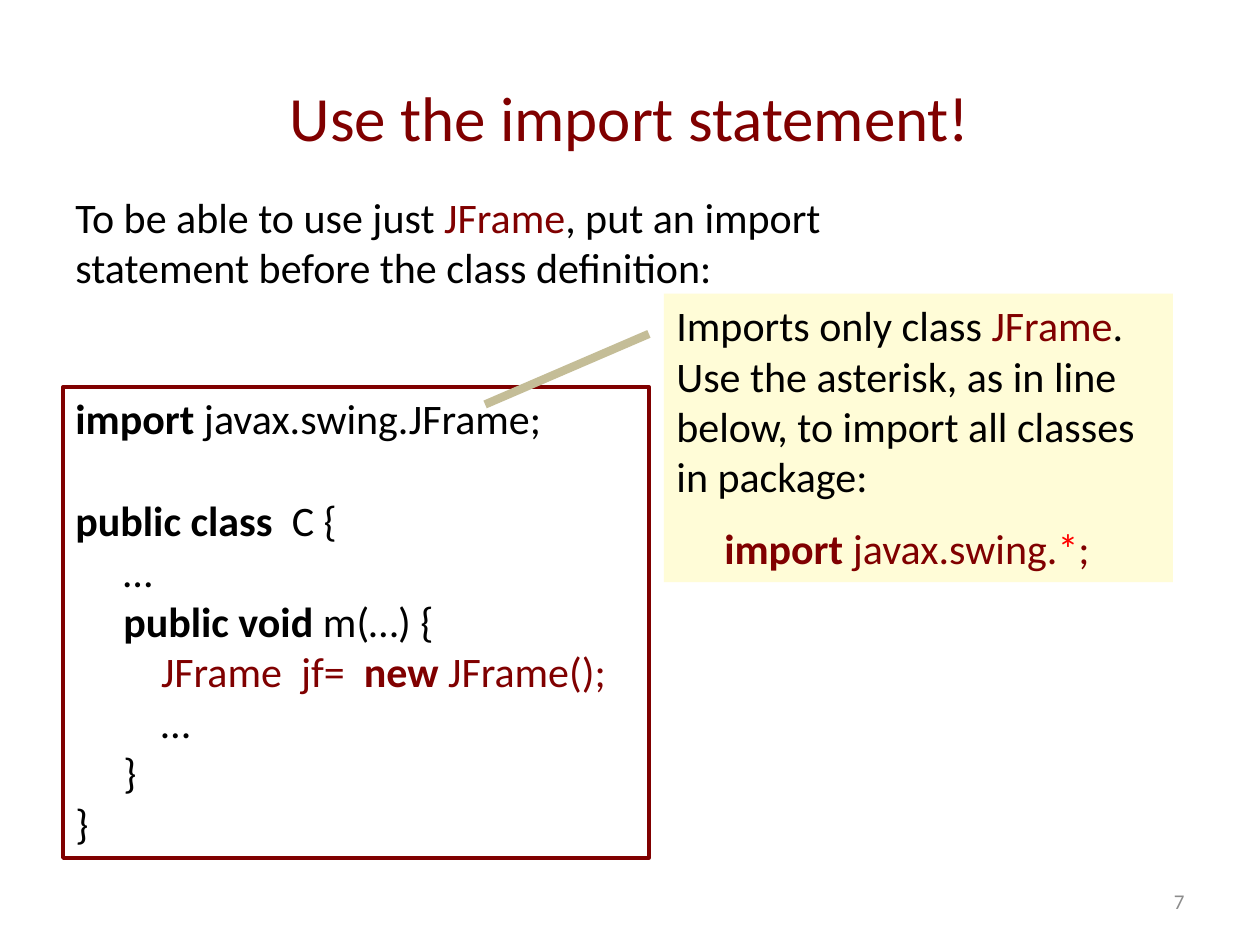
from pptx import Presentation
from pptx.dml.color import RGBColor as RGB
from pptx.enum.shapes import MSO_CONNECTOR as CONNECTOR, MSO_SHAPE as SHAPE
from pptx.enum.text import MSO_ANCHOR as ANCHOR, PP_ALIGN as ALIGN
from pptx.oxml.ns import qn
from pptx.util import Inches, Pt
from lxml import etree

COLORS = {
    "maroon": "800000",
    "black": "000000",
    "gray": "8C8C8C",
    "red": "FF0000",
    "cream": "FFFCD7",
    "tan": "C4BD97",
}
LINE_HEIGHT = 29.3
INDENT = {"member": 0.38, "body": 0.68}


class SlideBuilder:
    """Holds the text style and the current slide, and adds elements to it."""

    font_name = "Calibri"

    def __init__(self, slide):
        self.slide = slide

    def color(self, name):
        return RGB.from_string(COLORS[name])

    def fill_text(self, shape, paragraphs, size=24, anchor=ANCHOR.TOP, align=ALIGN.LEFT):
        frame = shape.text_frame
        frame.word_wrap = True
        frame.vertical_anchor = anchor
        for index, (runs, indent, before) in enumerate(paragraphs):
            paragraph = frame.add_paragraph() if index else frame.paragraphs[0]
            layout = {"alignment": align, "space_before": Pt(before)}
            for key, value in layout.items():
                setattr(paragraph, key, value)
            if indent:
                paragraph._p.get_or_add_pPr().set("marL", str(Inches(indent)))
            for words, color, bold in runs:
                run = paragraph.add_run()
                run.text = words
                style = {"name": self.font_name, "size": Pt(size), "bold": bold}
                for key, value in style.items():
                    setattr(run.font, key, value)
                run.font.color.rgb = self.color(color)

    def text(self, box, paragraphs, **style):
        shape = self.slide.shapes.add_textbox(*map(Inches, box))
        self.fill_text(shape, paragraphs, **style)

    def panel(self, box, paragraphs, fill=None, border=None):
        shape = self.slide.shapes.add_shape(SHAPE.RECTANGLE, *map(Inches, box))
        shape.shadow.inherit = False
        if fill:
            shape.fill.solid()
            shape.fill.fore_color.rgb = self.color(fill)
        else:
            shape.fill.background()
        if border:
            shape.line.color.rgb = self.color(border)
            shape.line.width = Pt(2)
        else:
            shape.line.fill.background()
        self.fill_text(shape, paragraphs)

    def line(self, start, end, color, width):
        pointer = self.slide.shapes.add_connector(
            CONNECTOR.STRAIGHT, *map(Inches, start + end)
        )
        pointer.line.color.rgb = self.color(color)
        pointer.line.width = Pt(width)
        etree.SubElement(pointer._element.spPr, qn("a:effectLst"))


def plain(words, color="black"):
    return words, color, False


def bold(words, color="black"):
    return words, color, True


def para(*runs, indent=0, before=0):
    return runs, indent, before


def main():
    deck = Presentation()
    deck.slide_width, deck.slide_height = Inches(10), Inches(7.5)
    builder = SlideBuilder(deck.slides.add_slide(deck.slide_layouts[6]))
    member, body = INDENT["member"], INDENT["body"]

    builder.text(
        (0.5, 0.3, 9, 1.25),
        [para(plain("Use the import statement!", "maroon"))],
        size=36, anchor=ANCHOR.MIDDLE, align=ALIGN.CENTER,
    )
    builder.text(
        (7.17, 6.95, 2.33, 0.4),
        [para(plain("7", "gray"))],
        size=12, anchor=ANCHOR.MIDDLE, align=ALIGN.RIGHT,
    )
    builder.text((0.5, 1.47, 6.46, 1.17), [para(
        plain("To be able to use just "),
        plain("JFrame", "maroon"),
        plain(", put an import statement before the class definition:"),
    )])

    code = [
        para(bold("import "), plain("javax.swing.JFrame;")),
        para(bold("public class "), plain(" C {"), before=LINE_HEIGHT),
        para(plain("…"), indent=member),
        para(bold("public void "), plain("m(…) {"), indent=member),
        para(
            plain("JFrame  jf=  ", "maroon"),
            bold("new ", "maroon"),
            plain("JFrame();", "maroon"),
            indent=body,
        ),
        para(plain("…"), indent=body),
        para(plain("}"), indent=member),
        para(plain("}")),
    ]
    builder.panel((0.5, 3.07, 4.65, 3.74), code, border="maroon")

    import_note = [
        para(
            plain("Imports only class "),
            plain("JFrame", "maroon"),
            plain(". Use the asterisk, as in line below, "
                  "to import all classes in package:"),
        ),
        para(
            bold("import ", "maroon"),
            plain("javax.swing.", "maroon"),
            plain("*", "red"),
            plain(";", "maroon"),
            indent=member, before=12,
        ),
    ]
    builder.panel((5.27, 2.33, 4.04, 2.29), import_note, fill="cream")
    builder.line((3.85, 3.21), (5.15, 2.65), "tan", 4.75)
    deck.save("out.pptx")


if __name__ == "__main__":
    main()
